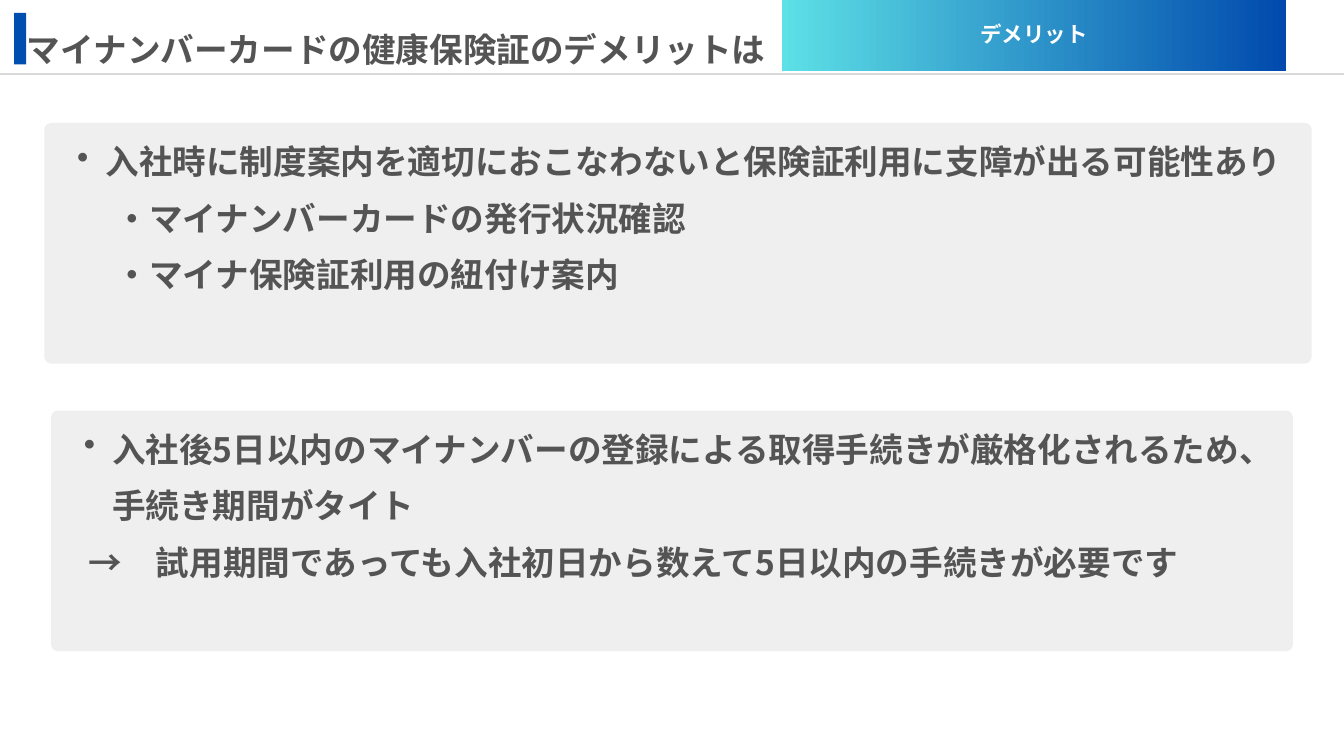
from pptx import Presentation
from pptx import util as u
from pptx.dml.color import RGBColor
from pptx.enum import shapes, text
from pptx.oxml.ns import qn
from lxml import etree

FONT = "Noto Sans CJK JP"
BLUE = RGBColor(0x00, 0x4E, 0xAE)
CYAN = RGBColor(0x5D, 0xE0, 0xE6)
DEEP_BLUE = RGBColor(0x00, 0x4A, 0xAD)
RULE_GRAY = RGBColor(0xD9, 0xD9, 0xD9)
PANEL_GRAY = RGBColor(0xEF, 0xEF, 0xEF)
TEXT_GRAY = RGBColor(0x54, 0x54, 0x54)
WHITE = RGBColor(0xFF, 0xFF, 0xFF)


class SlideBuilder:
    """Draws styled elements on the current slide."""

    def __init__(self, slide):
        self.slide = slide

    def format_paragraph(self, paragraph, words, size, color, align=text.PP_ALIGN.LEFT):
        paragraph.text = words
        paragraph.alignment = align
        paragraph.line_spacing = 1.4
        paragraph.space_before = u.Pt(0)
        font = paragraph.font
        font.name, font.size, font.bold = FONT, u.Pt(size), True
        font.color.rgb = color
        properties = paragraph._p.pPr.find(qn("a:defRPr"))
        latin = properties.find(qn("a:latin"))
        latin.addnext(properties.makeelement(qn("a:ea"), {"typeface": FONT}))

    def set_frame(self, frame, anchor, left=0, top=0, right=0, bottom=0):
        frame.word_wrap = True
        frame.auto_size = text.MSO_AUTO_SIZE.NONE
        frame.vertical_anchor = anchor
        frame.margin_left, frame.margin_top = u.Inches(left), u.Inches(top)
        frame.margin_right, frame.margin_bottom = u.Inches(right), u.Inches(bottom)

    def indent(self, paragraph, margin, bullet=False):
        properties = paragraph._p.get_or_add_pPr()
        properties.set("marL", str(u.Inches(margin)))
        properties.set("indent", str(u.Inches(-0.42 if bullet else 0)))
        if bullet:
            mark = etree.Element(qn("a:buChar"), char="•")
            properties.find(qn("a:defRPr")).addprevious(mark)

    def title(self, words, left, top, width, height):
        title = self.slide.shapes.title
        title.left, title.top = u.Inches(left), u.Inches(top)
        title.width, title.height = u.Inches(width), u.Inches(height)
        self.set_frame(title.text_frame, text.MSO_ANCHOR.TOP)
        self.format_paragraph(title.text_frame.paragraphs[0], words, 36, TEXT_GRAY)

    def box(self, kind, left, top, width, height, color=None):
        shape = self.slide.shapes.add_shape(
            kind, u.Inches(left), u.Inches(top), u.Inches(width), u.Inches(height))
        shape.shadow.inherit = False
        shape.line.fill.background()
        if color is not None:
            shape.fill.solid()
            shape.fill.fore_color.rgb = color
        return shape

    def rule(self, top, width):
        line = self.slide.shapes.add_connector(
            shapes.MSO_CONNECTOR.STRAIGHT, 0, u.Inches(top), u.Inches(width), u.Inches(top))
        line.line.color.rgb = RULE_GRAY
        line.line.width = u.Pt(3)
        etree.SubElement(line._element.spPr, qn("a:effectLst"))

    def banner(self, words, left, top, width, height):
        shape = self.box(shapes.MSO_SHAPE.RECTANGLE, left, top, width, height)
        shape.fill.gradient()
        shape.fill.gradient_angle = 0
        for stop, color, position in zip(shape.fill.gradient_stops, (CYAN, DEEP_BLUE), (0, 1)):
            stop.color.rgb = color
            stop.position = position
        frame = shape.text_frame
        self.set_frame(frame, text.MSO_ANCHOR.MIDDLE, 0.06, 0.06, 0.06, 0.26)
        self.format_paragraph(frame.paragraphs[0], words, 23, WHITE, text.PP_ALIGN.CENTER)

    def panel(self, left, top, width, point, details, detail_margin):
        height = 3.58
        shape = self.box(
            shapes.MSO_SHAPE.ROUNDED_RECTANGLE, left, top, width, height, PANEL_GRAY)
        shape.adjustments[0] = 0.1 / height
        frame = shape.text_frame
        self.set_frame(frame, text.MSO_ANCHOR.TOP, left=0.03, right=0.03)
        self.format_paragraph(frame.paragraphs[0], point, 36, TEXT_GRAY)
        self.indent(frame.paragraphs[0], 0.85, bullet=True)
        for detail in details:
            paragraph = frame.add_paragraph()
            self.format_paragraph(paragraph, detail, 36, TEXT_GRAY)
            self.indent(paragraph, detail_margin)


def main():
    presentation = Presentation()
    presentation.slide_width, presentation.slide_height = u.Inches(20), u.Inches(11.25)
    builder = SlideBuilder(presentation.slides.add_slide(presentation.slide_layouts[5]))
    builder.box(shapes.MSO_SHAPE.RECTANGLE, 0.21, 0.19, 0.18, 0.77, BLUE)
    builder.rule(1.1, 20)
    builder.banner("デメリット", 11.63, 0, 7.51, 1.05)
    builder.title("マイナンバーカードの健康保険証のデメリットは", 0.4, 0.19, 11.23, 0.68)
    builder.panel(
        0.66, 1.83, 18.86,
        "入社時に制度案内を適切におこなわないと保険証利用に支障が出る可能性あり",
        ["・マイナンバーカードの発行状況確認", "・マイナ保険証利用の紐付け案内"], 1)
    builder.panel(
        0.76, 6.11, 18.48,
        "入社後5日以内のマイナンバーの登録による取得手続きが厳格化されるため、手続き期間がタイト",
        ["→\u3000試用期間であっても入社初日から数えて5日以内の手続きが必要です"], 0.5)
    presentation.save("out.pptx")


if __name__ == "__main__":
    main()
